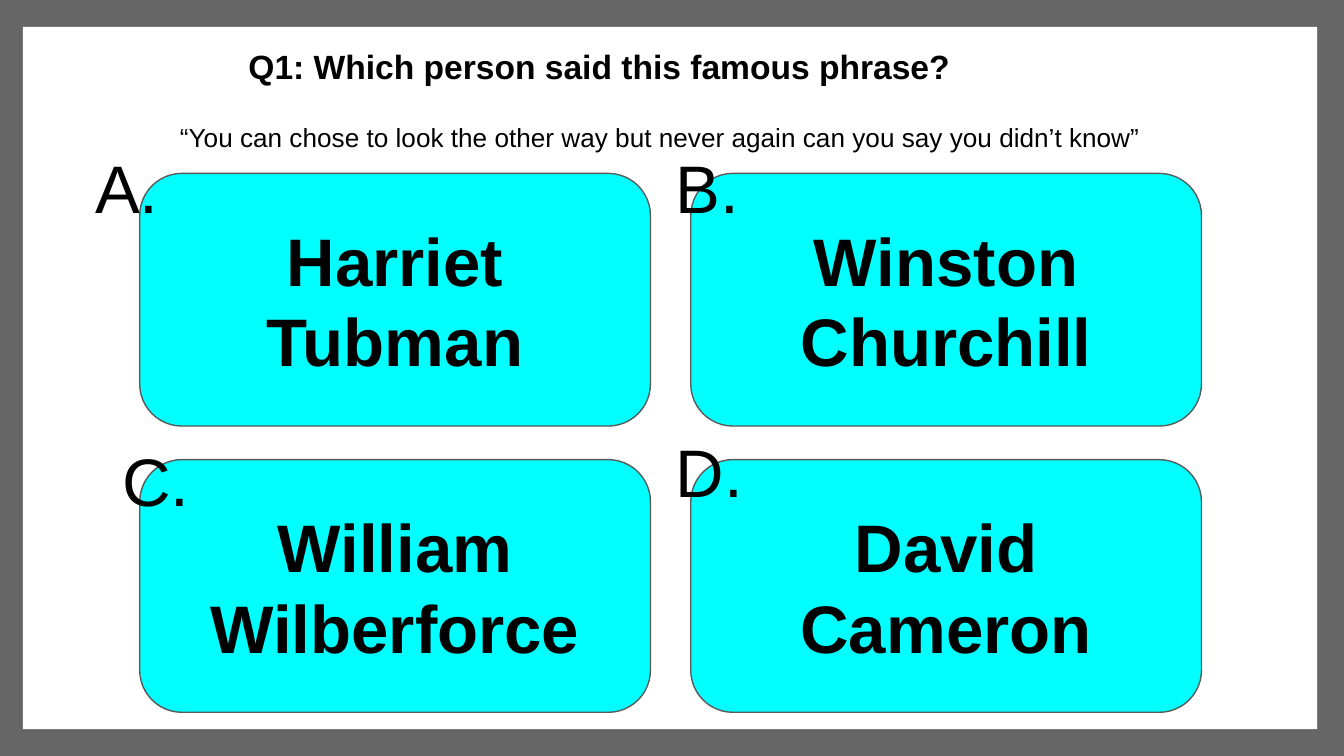
from pptx import Presentation
from pptx import util as u
from pptx.dml.color import RGBColor
from pptx.enum import shapes, text

WIDTH = 10
HEIGHT = WIDTH * 9 / 16
FONT = "Arial"
COLOURS = {"frame": "666666", "page": "FFFFFF", "card": "00FFFF",
           "outline": "595959", "ink": "000000"}

GRID_LEFT, GRID_TOP = 1.04, 1.29
CARD_WIDTH, CARD_HEIGHT = 3.8, 1.88
COLUMN_STEP, ROW_STEP = 4.1, 2.13

# name, letter, and the letter box relative to its card: left, top, width, height
ANSWERS = [
    ("Harriet Tubman", "A.", (-0.43, -0.3, 0.96, 0.79)),
    ("Winston Churchill", "B.", (-0.21, -0.3, 0.72, 0.72)),
    ("William Wilberforce", "C.", (-0.23, -0.25, 0.96, 0.72)),
    ("David Cameron", "D.", (-0.21, -0.32, 1.09, 0.72)),
]


def colour(key):
    return RGBColor.from_string(COLOURS[key])


def inches(box):
    return [u.Inches(length) for length in box]


def write(shape, words, size, bold=False, align=text.PP_ALIGN.LEFT,
          anchor=text.MSO_ANCHOR.TOP):
    frame = shape.text_frame
    frame.text = words
    frame.word_wrap = True
    frame.vertical_anchor = anchor
    frame.margin_left = frame.margin_right = u.Inches(0.1)
    frame.margin_top = frame.margin_bottom = u.Inches(0.1)
    paragraph = frame.paragraphs[0]
    paragraph.alignment = align
    font = paragraph.runs[0].font
    font.name, font.size, font.bold = FONT, u.Pt(size), bold
    font.color.rgb = colour("ink")


def add_panel(slide, kind, box, fill, outline=None):
    panel = slide.shapes.add_shape(kind, *inches(box))
    panel.shadow.inherit = False
    panel.fill.solid()
    panel.fill.fore_color.rgb = colour(fill)
    if outline:
        panel.line.color.rgb = colour(outline)
        panel.line.width = u.Pt(0.75)
    else:
        panel.line.fill.background()
    return panel


def add_label(slide, box, words, size, bold=False):
    write(slide.shapes.add_textbox(*inches(box)), words, size, bold)


def add_border(slide, box):
    """Grey surround with the white page set inside it."""
    left, top, width, height = box
    rectangle = shapes.MSO_SHAPE.RECTANGLE
    add_panel(slide, rectangle, box, "frame")
    page = (left + 0.19, top + 0.2, width - 0.39, height - 0.4)
    add_panel(slide, rectangle, page, "page")


def add_question(slide, box, question, quote):
    left, top, width, height = box
    add_label(slide, (left + 0.51, top, 5.98, 0.53), question, 18, bold=True)
    add_label(slide, (left, top + height - 0.46, width, 0.46), quote, 14)


def add_answer_cards(slide, box):
    """Two by two cards; box is the first one."""
    left, top, width, height = box
    corners = [(left + i % 2 * COLUMN_STEP, top + i // 2 * ROW_STEP)
               for i in range(len(ANSWERS))]
    for (x, y), (name, _, _) in zip(corners, ANSWERS):
        card = add_panel(slide, shapes.MSO_SHAPE.ROUNDED_RECTANGLE,
                         (x, y, width, height), "card", "outline")
        write(card, name, 36, True, text.PP_ALIGN.CENTER,
              text.MSO_ANCHOR.MIDDLE)
    # Letters overlap the cards, so they come after all of them.
    for (x, y), (_, letter, (dx, dy, w, h)) in zip(corners, ANSWERS):
        add_label(slide, (x + dx, y + dy, w, h), letter, 36)


def main():
    deck = Presentation()
    deck.slide_width, deck.slide_height = u.Inches(WIDTH), u.Inches(HEIGHT)
    slide = deck.slides.add_slide(deck.slide_layouts[6])
    add_border(slide, (-0.02, 0, WIDTH + 0.02, HEIGHT))
    add_question(slide, (1.24, 0.24, 7.81, 1.02),
                 "Q1: Which person said this famous phrase?",
                 "“You can chose to look the other way but never again "
                 "can you say you didn’t know”")
    add_answer_cards(slide, (GRID_LEFT, GRID_TOP, CARD_WIDTH, CARD_HEIGHT))
    deck.save("out.pptx")


if __name__ == "__main__":
    main()
